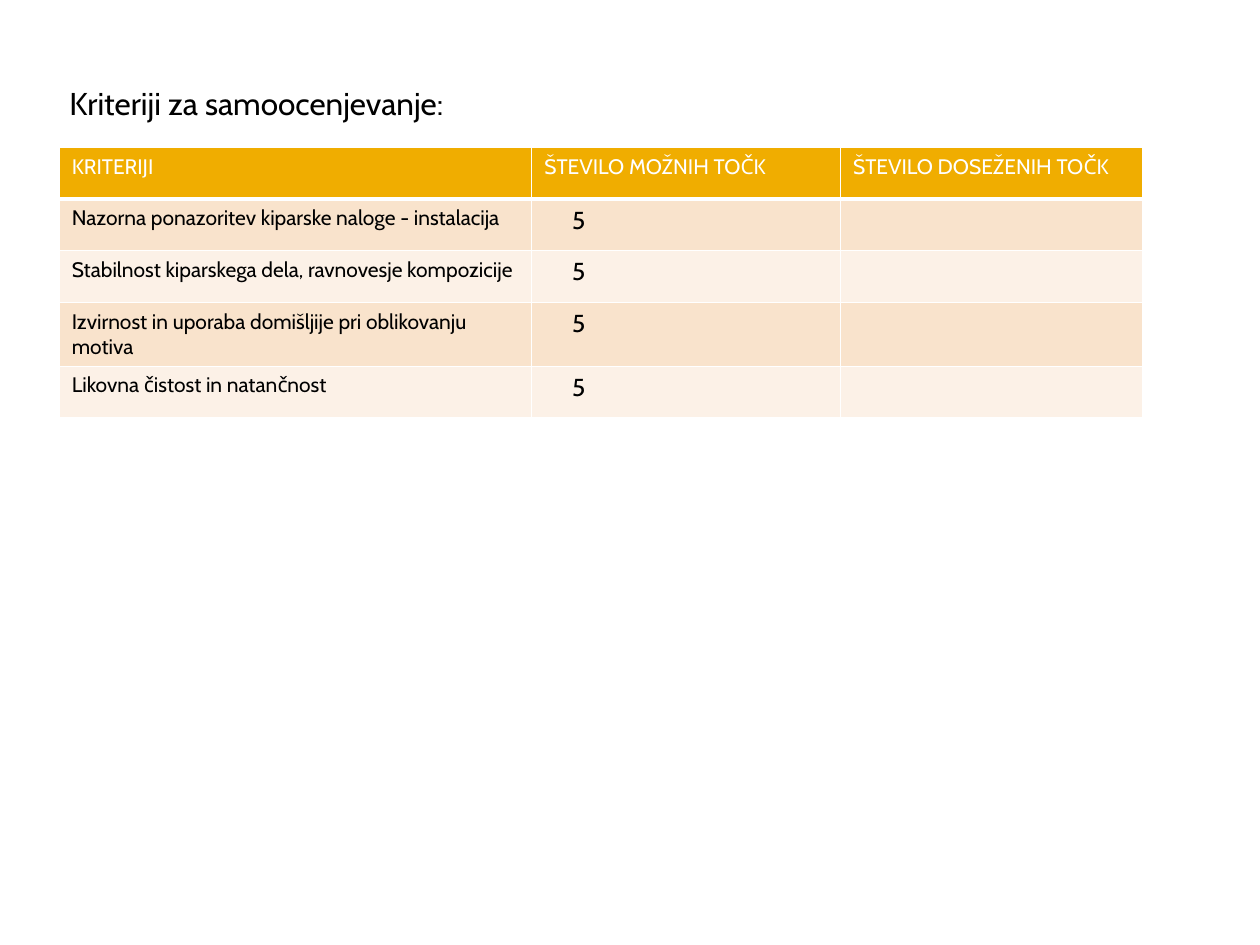
from lxml.etree import SubElement
from pptx import Presentation
from pptx.dml.color import RGBColor as RGB
from pptx.enum.text import MSO_ANCHOR as Anchor, PP_ALIGN as Align
from pptx.oxml.ns import qn
from pptx.util import Inches, Pt

FONT = "Cabin"
COLORS = {"header": "F0AD00", "odd": "F9E3CC", "even": "FCF1E7",
          "light": "FFFFFF", "text": "000000"}
TITLE = "Kriteriji za samoocenjevanje:"
HEADERS = ["KRITERIJI", "ŠTEVILO MOŽNIH TOČK", "ŠTEVILO DOSEŽENIH TOČK"]
CRITERIA = [
    "Nazorna ponazoritev kiparske naloge - instalacija",
    "Stabilnost kiparskega dela, ravnovesje kompozicije",
    "Izvirnost in uporaba domišljije pri oblikovanju motiva",
    "Likovna čistost in natančnost",
]
POINTS = "5"
COL_WIDTHS = [3.75, 2.45, 2.4]
ROW_HEIGHT = 0.41


def apply(obj, values):
    for name, value in values.items():
        setattr(obj, name, value)


def write(tf, text, size, color):
    p = tf.paragraphs[0]
    p.alignment = Align.LEFT
    r = p.add_run()
    r.text = text
    apply(r.font, {"name": FONT, "size": Pt(size), "bold": False})
    r.font.color.rgb = RGB.from_string(COLORS[color])


def set_borders(cell, bottom):
    tc_pr = cell._tc.get_or_add_tcPr()
    widths = {"a:lnL": 1, "a:lnR": 1, "a:lnT": 1, "a:lnB": bottom}
    for tag, width in widths.items():
        ln = SubElement(tc_pr, qn(tag), w=str(Pt(width)))
        fill = SubElement(ln, qn("a:solidFill"))
        SubElement(fill, qn("a:srgbClr"), val=COLORS["light"])


def add_title(s, left, top, width, height):
    sp = s.shapes.title
    apply(sp, {"left": Inches(left), "top": Inches(top),
               "width": Inches(width), "height": Inches(height)})
    apply(sp.text_frame, {"word_wrap": True, "vertical_anchor": Anchor.BOTTOM,
                          "margin_left": Inches(0.55)})
    write(sp.text_frame, TITLE, 18, "text")


def add_criteria_table(s, left, top):
    rows = [HEADERS] + [[name, POINTS, ""] for name in CRITERIA]
    table = s.shapes.add_table(
        len(rows), len(HEADERS), Inches(left), Inches(top),
        Inches(sum(COL_WIDTHS)), Inches(ROW_HEIGHT * len(rows))).table
    for col, width in zip(table.columns, COL_WIDTHS):
        col.width = Inches(width)

    for i, values in enumerate(rows):
        table.rows[i].height = Inches(ROW_HEIGHT)
        band = "header" if i == 0 else "odd" if i % 2 else "even"
        for j, text in enumerate(values):
            cell = table.cell(i, j)
            set_borders(cell, bottom=1 if i else 3)
            cell.fill.solid()
            cell.fill.fore_color.rgb = RGB.from_string(COLORS[band])
            is_points = i > 0 and j == 1
            if is_points:
                cell.margin_left = Inches(0.32)
            if text:
                write(cell.text_frame, text, 14 if is_points else 12,
                      "text" if i else "light")


def main():
    prs = Presentation()
    apply(prs, {"slide_width": Inches(10), "slide_height": Inches(7.5)})
    s = prs.slides.add_slide(prs.slide_layouts[5])  # title only
    # Criteria table below the heading
    add_criteria_table(s, 0.47, 1.17)
    add_title(s, 0, 0.31, 9.77, 0.71)
    prs.save("out.pptx")


if __name__ == "__main__":
    main()
